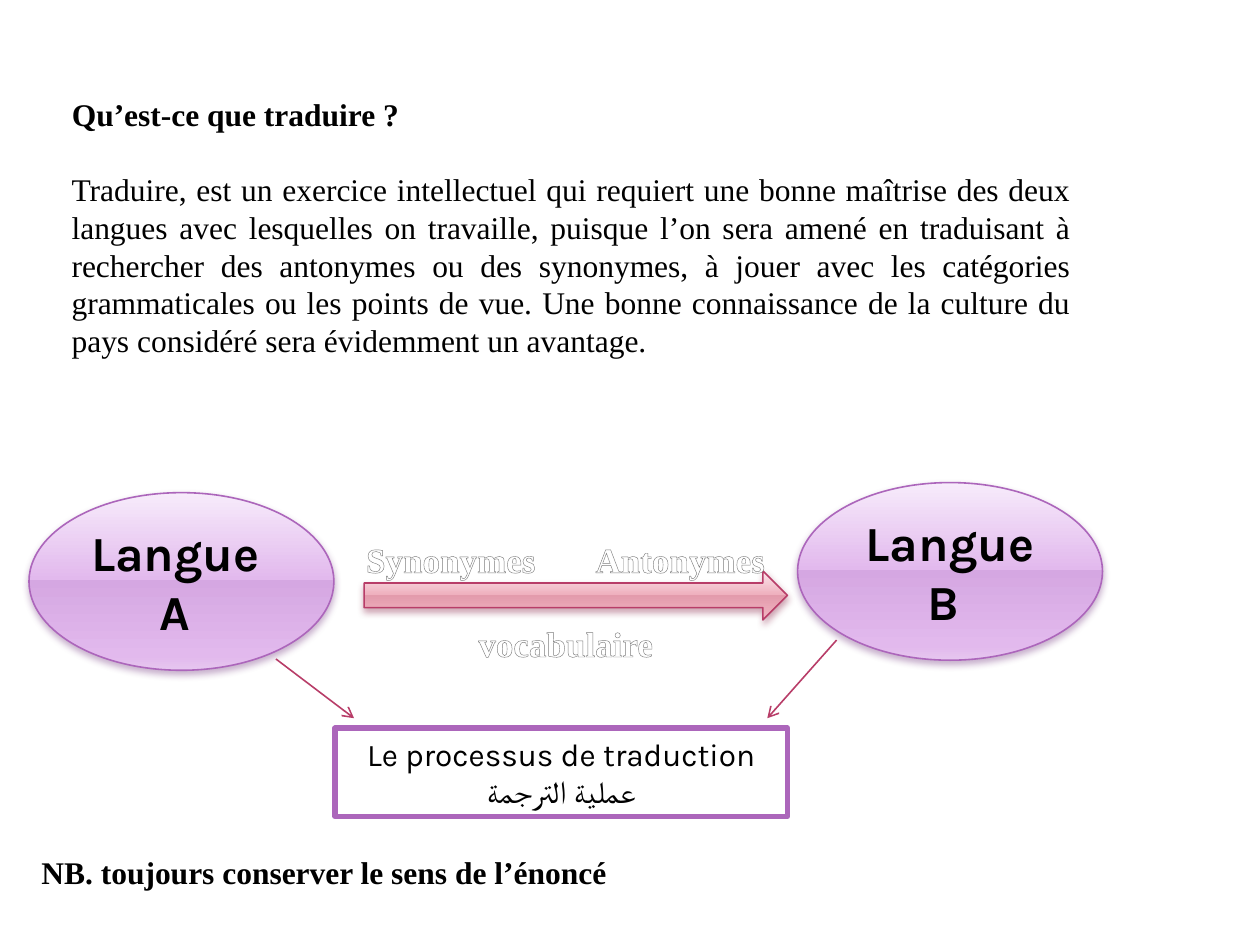
from lxml import etree
from pptx import Presentation
from pptx.dml.color import RGBColor
from pptx.enum import shapes, text
from pptx.oxml import ns
from pptx.util import Inches, Pt

HEX = {"ink": "000000", "paper": "FFFFFF", "violet": "AC66BB", "rose": "B83D68",
       "edge": "7D7D7D", "dusk": "6E307B", "wine": "7F1238"}
VIOLET = [(0, "F7EBFB"), (49, "E2B9ED"), (49, "D5A7E2"), (92, "E2B9ED"), (100, "E6C6EF")]
ROSE = [(0, "FCE8ED"), (49, "EFB0BE"), (49, "E39BAC"), (92, "EFB0BE"), (100, "F0BEC9")]
SILVER = [(0, "FFFFFF"), (9, "FFFFFF"), (50, "7F7F7F"), (79, "FFFFFF"), (100, "FFFFFF")]
SERIF, SANS = "Times New Roman", "Karla"
LEFT, MID, JUST = text.PP_ALIGN.LEFT, text.PP_ALIGN.CENTER, text.PP_ALIGN.JUSTIFY
TOP, HALF = text.MSO_ANCHOR.TOP, text.MSO_ANCHOR.MIDDLE
FORM = shapes.MSO_SHAPE

TITLE = "Qu’est-ce que traduire ?"
BODY = ("Traduire, est un exercice intellectuel qui requiert une bonne maîtrise des deux "
        "langues avec lesquelles on travaille, puisque l’on sera amené en traduisant à "
        "rechercher des antonymes ou des synonymes, à jouer avec les catégories "
        "grammaticales ou les points de vue. Une bonne connaissance de la culture du "
        "pays considéré sera évidemment un avantage.")
NOTE = "NB. toujours conserver le sens de l’énoncé"
LANGS = [(6.33, 3.83, ["Langue", "B "]), (0.23, 3.91, ["Langue ", "A "])]
LINKS = [(2.19, 5.23, 2.81, 5.7), (6.64, 5.08, 6.09, 5.7)]
RESULT = ["Le processus de traduction", "عملية الترجمة"]
WORDS = ["\tSynonymes\tAntonymes", "vocabulaire"]
TABS = [0.98, 2.8]


def add(parent, tag, **attrs):
    return etree.SubElement(parent, ns.qn(tag), {k: str(v) for k, v in attrs.items()})


def blend(fill, parent, stops):
    fill.background()
    blank = parent.find(ns.qn("a:noFill"))
    grad = etree.Element(ns.qn("a:gradFill"), rotWithShape="1")
    row = add(grad, "a:gsLst")
    for pos, tone in stops:
        add(add(row, "a:gs", pos=pos * 1000), "a:srgbClr", val=tone)
    add(grad, "a:lin", ang=5400000, scaled=0)
    parent.replace(blank, grad)


def write(shape, lines, size, face, bold=False, align=LEFT, anchor=TOP):
    frame = shape.text_frame
    frame.text = "\n".join(lines)
    look = {"word_wrap": True, "auto_size": text.MSO_AUTO_SIZE.NONE,
            "vertical_anchor": anchor}
    for key, val in look.items():
        setattr(frame, key, val)
    for para in frame.paragraphs:
        para.alignment = align
        para.line_spacing = Pt(size * 1.2)
        for run in para.runs:
            for key, val in {"size": Pt(size), "name": face, "bold": bold}.items():
                setattr(run.font, key, val)
            run.font.color.rgb = RGBColor.from_string(HEX["ink"])
    return frame


def stroke(shape, tone, width):
    shape.line.color.rgb = RGBColor.from_string(HEX[tone])
    shape.line.width = Pt(width)


def draw(slide, form, box, tone, width=0.9, stops=None, shade=None):
    shape = slide.shapes.add_shape(form, *map(Inches, box))
    shape.shadow.inherit = False
    stroke(shape, tone, width)
    if stops:
        props = shape._element.spPr
        blend(shape.fill, props, stops)
        glow = add(props.find(ns.qn("a:effectLst")), "a:outerShdw", blurRad=Pt(4),
                   dist=Pt(2), dir=5400000, rotWithShape=0)
        add(add(glow, "a:srgbClr", val=HEX[shade]), "a:alpha", val=38000)
    else:
        shape.fill.solid()
        shape.fill.fore_color.rgb = RGBColor.from_string(HEX["paper"])
    return shape


def link(slide, ends):
    line = slide.shapes.add_connector(shapes.MSO_CONNECTOR.STRAIGHT, *map(Inches, ends))
    stroke(line, "rose", 0.9)
    add(line.line._get_or_add_ln(), "a:tailEnd", type="arrow")
    add(line._element.spPr, "a:effectLst")


def label(slide, box):
    frame = write(slide.shapes.add_textbox(*map(Inches, box)), WORDS, 20, SERIF, True, MID)
    first, last = frame.paragraphs
    first.alignment = LEFT
    tabs = add(first._p.get_or_add_pPr(), "a:tabLst")
    for pos in TABS:
        add(tabs, "a:tab", pos=Inches(pos), algn="ctr")
    last.space_before = Pt(24)
    for para in frame.paragraphs:
        for run in para.runs:
            props = run._r.get_or_add_rPr()
            blend(run.font.fill, props, SILVER)
            edge = etree.Element(ns.qn("a:ln"), w=str(Pt(0.83)))
            add(add(edge, "a:solidFill"), "a:srgbClr", val=HEX["edge"])
            props.insert(0, edge)


def main():
    deck = Presentation()
    deck.slide_width, deck.slide_height = Inches(10), Inches(7.5)
    slide = deck.slides.add_slide(deck.slide_layouts[5])
    title = slide.shapes.title
    place = {"left": 0.47, "top": 0.7, "width": 8.13, "height": 0.4}
    for key, val in place.items():
        setattr(title, key, Inches(val))
    write(title, [TITLE], 18, SERIF, True)
    body = slide.shapes.add_textbox(*map(Inches, (0.47, 1.3, 8.13, 1.62)))
    write(body, [BODY], 18, SERIF, align=JUST)
    for x, y, lines in LANGS:
        oval = draw(slide, FORM.OVAL, (x, y, 2.42, 1.41), "violet", stops=VIOLET, shade="dusk")
        write(oval, lines, 28, SANS, True, MID, HALF)
    draw(slide, FORM.RIGHT_ARROW, (2.89, 4.53, 3.36, 0.39), "rose", stops=ROSE, shade="wine")
    for ends in LINKS:
        link(slide, ends)
    frame = draw(slide, FORM.RECTANGLE, (2.66, 5.78, 3.59, 0.7), "violet", 3.15)
    write(frame, RESULT, 18, SANS, align=MID, anchor=HALF)
    label(slide, (2.5, 4.22, 3.98, 1.11))
    note = slide.shapes.add_textbox(*map(Inches, (0.23, 6.72, 6.72, 0.4)))
    write(note, [NOTE], 18, SERIF, True)
    deck.save("out.pptx")


if __name__ == "__main__":
    main()
